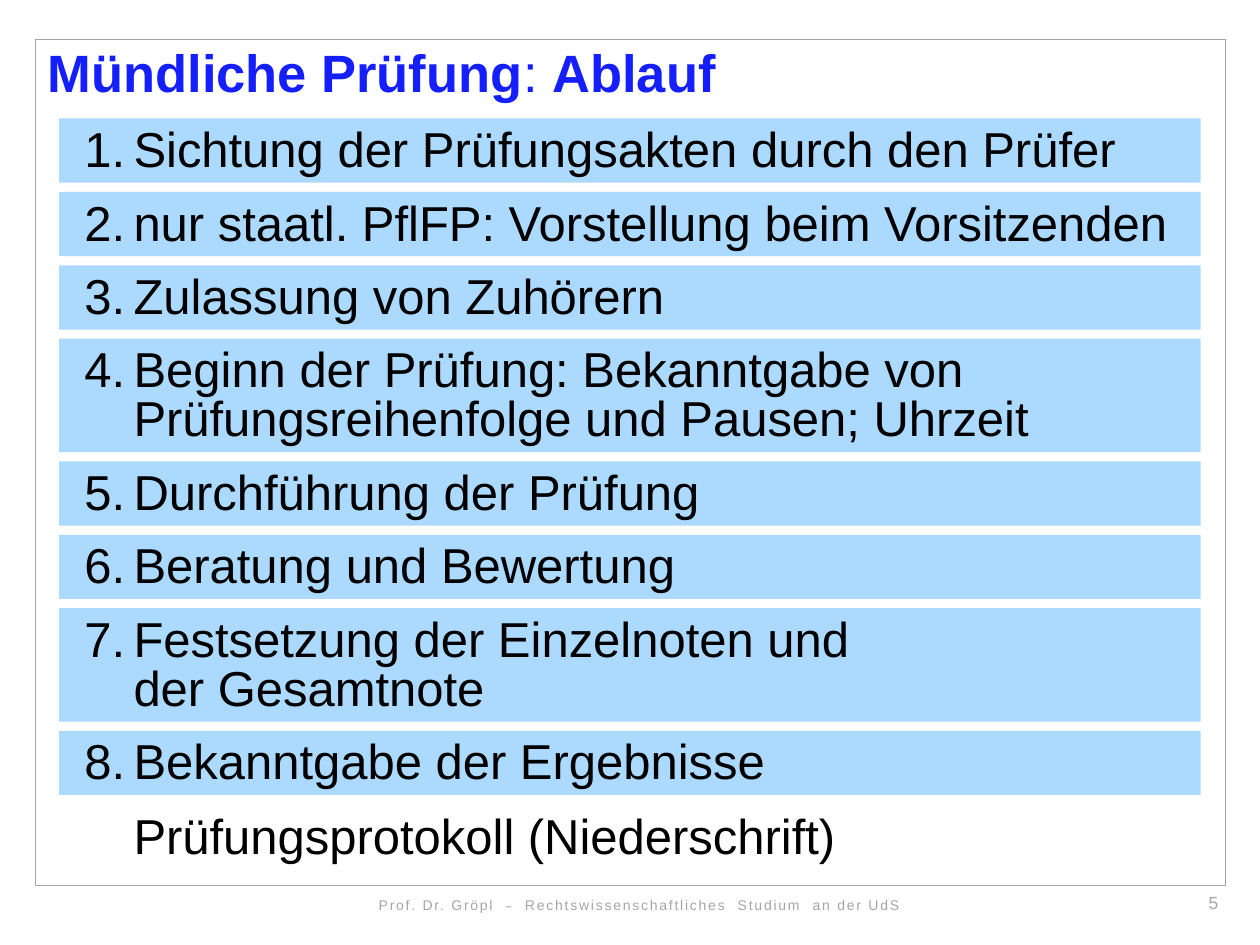
from dataclasses import dataclass

from pptx import Presentation
from pptx.dml.color import RGBColor
from pptx.enum.shapes import MSO_SHAPE
from pptx.enum.text import MSO_ANCHOR, MSO_AUTO_SIZE, PP_ALIGN
from pptx.util import Inches, Pt


@dataclass(frozen=True)
class Theme:
    font: str = "Arial"
    dash_font: str = "League Spartan"
    blue: str = "141FFC"
    band: str = "ACD9FE"
    grey: str = "A5A5A5"
    black: str = "000000"
    title: int = 30
    body: int = 28
    number: int = 10
    footer: int = 8


THEME = Theme()
LEFT, WIDTH = 0.47, 9.06
STEPS_TOP, STEPS_BOTTOM = 0.94, 6.31
STEP_HEIGHT = {1: 0.51, 2: 0.9}  # by number of text lines
HANG = 0.39
LINE_SPACING = 0.83

# One list of paragraphs per step; \v is a line break
STEPS = [
    ["Sichtung der Prüfungsakten durch den Prüfer"],
    ["nur staatl. PflFP: Vorstellung beim Vorsitzenden"],
    ["Zulassung von Zuhörern"],
    ["Beginn der Prüfung: Bekanntgabe von",
     "Prüfungsreihenfolge und Pausen; Uhrzeit"],
    ["Durchführung der Prüfung"],
    ["Beratung und Bewertung"],
    ["Festsetzung der Einzelnoten und\vder Gesamtnote"],
    ["Bekanntgabe der Ergebnisse"],
]


def set_frame(sp, insets, auto_size=MSO_AUTO_SIZE.SHAPE_TO_FIT_TEXT):
    """Insets are left, top, right, bottom in inches."""
    tf = sp.text_frame
    formats = {"word_wrap": True, "auto_size": auto_size,
               "vertical_anchor": MSO_ANCHOR.TOP}
    sides = ("left", "top", "right", "bottom")
    formats |= {f"margin_{s}": Inches(v) for s, v in zip(sides, insets)}
    for name, value in formats.items():
        setattr(tf, name, value)
    return tf


def style_run(r, size, color, font=THEME.font, bold=False):
    formats = {"name": font, "size": Pt(size), "bold": bold}
    for name, value in formats.items():
        setattr(r.font, name, value)
    r.font.color.rgb = RGBColor.from_string(color)


def add_run(p, text, size, color, **formats):
    r = p.add_run()
    r.text = text
    style_run(r, size, color, **formats)
    return r


def add_textbox(slide, box, insets, **formats):
    return set_frame(slide.shapes.add_textbox(*map(Inches, box)), insets, **formats)


def add_rect(slide, box, fill=None, line=None):
    sp = slide.shapes.add_shape(MSO_SHAPE.RECTANGLE, *map(Inches, box))
    sp.shadow.inherit = False
    if fill:
        sp.fill.solid()
        sp.fill.fore_color.rgb = RGBColor.from_string(fill)
    else:
        sp.fill.background()
    if line:
        sp.line.color.rgb = RGBColor.from_string(line)
        sp.line.width = Pt(0.5)
    else:
        sp.line.fill.background()
    return sp


def write_hanging(tf, paragraphs):
    """The first paragraph hangs its number; the others align with its text."""
    for i, text in enumerate(paragraphs):
        p = tf.add_paragraph() if i else tf.paragraphs[0]
        p.text = text
        p.alignment = PP_ALIGN.LEFT
        p.line_spacing = LINE_SPACING
        pPr = p._p.get_or_add_pPr()
        pPr.set("marL", str(Inches(HANG)))
        pPr.set("indent", str(0 if i else -Inches(HANG)))
        for r in p.runs:
            style_run(r, THEME.body, THEME.black)


def add_title(slide):
    sp = slide.shapes.title
    sp.left, sp.top, sp.width, sp.height = map(Inches, (0.28, 0.32, 7.56, 0.55))
    p = set_frame(sp, (0.1, 0.08, 0.1, 0.05)).paragraphs[0]
    p.alignment = PP_ALIGN.LEFT
    p.line_spacing = LINE_SPACING
    for text, bold in (("Mündliche Prüfung", True), (": ", False), ("Ablauf", True)):
        add_run(p, text, THEME.title, THEME.blue, bold=bold)


def add_steps(slide):
    heights = [STEP_HEIGHT[len("\v".join(s).split("\v"))] for s in STEPS]
    gap = (STEPS_BOTTOM - STEPS_TOP - sum(heights)) / (len(STEPS) - 1)
    top = STEPS_TOP
    for n, (step, height) in enumerate(zip(STEPS, heights), 1):
        sp = add_rect(slide, (LEFT, top, WIDTH, height), fill=THEME.band)
        tf = set_frame(sp, (0.2, 0.08, 0.04, 0.04))
        write_hanging(tf, [f"{n}.\t{step[0]}", *step[1:]])
        top += height + gap


def add_footer(slide):
    p = add_textbox(slide, (1.87, 7.07, 6.41, 0.24), (0.1, 0.05, 0.1, 0.05)).paragraphs[0]
    p.alignment = PP_ALIGN.CENTER
    for text, font in (
        ("Prof. Dr. Gröpl  ", THEME.font),
        ("–", THEME.dash_font),
        ("  Rechtswissenschaftliches  Studium  an der UdS", THEME.font),
    ):
        r = add_run(p, text, THEME.footer, THEME.grey, font=font)
        r._r.get_or_add_rPr().set("spc", "100")

    p = add_textbox(slide, (8.81, 7.03, 0.86, 0.27), (0.1, 0.05, 0, 0.05)).paragraphs[0]
    p.alignment = PP_ALIGN.RIGHT
    add_run(p, "5", THEME.number, THEME.grey)


def main():
    prs = Presentation()
    prs.slide_width, prs.slide_height = Inches(10), Inches(7.5)
    slide = prs.slides.add_slide(prs.slide_layouts[5])
    add_rect(slide, (0.28, 0.31, 9.45, 6.72), line=THEME.grey)
    add_footer(slide)
    add_title(slide)
    add_steps(slide)
    tf = add_textbox(slide, (LEFT, 6.43, WIDTH, 0.47), (0.2, 0.04, 0.04, 0.04),
                     auto_size=MSO_AUTO_SIZE.NONE)
    write_hanging(tf, ["\tPrüfungsprotokoll (Niederschrift)"])
    prs.save("out.pptx")


if __name__ == "__main__":
    main()
